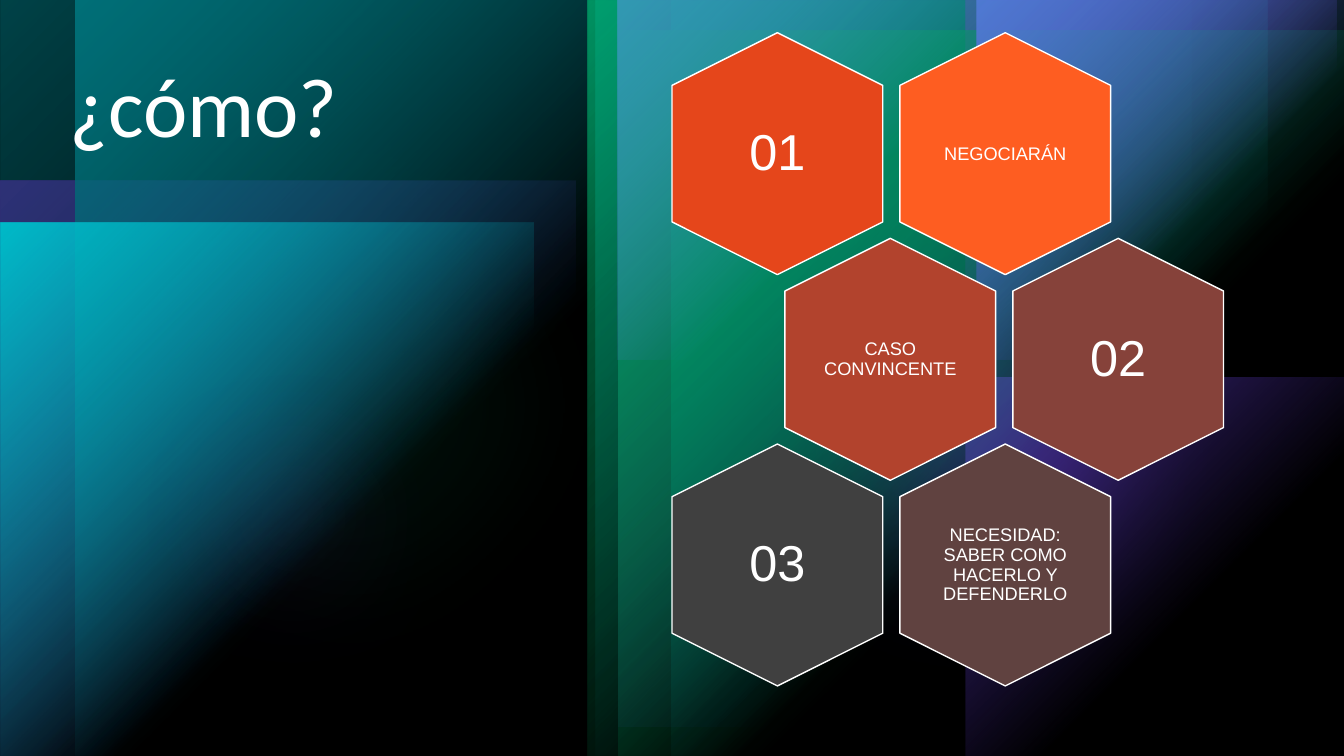
from lxml import etree
from pptx import Presentation
from pptx.dml.color import RGBColor
from pptx.enum.shapes import MSO_SHAPE
from pptx.enum.text import MSO_ANCHOR, PP_ALIGN
from pptx.oxml import parse_xml
from pptx.oxml.ns import nsdecls, qn
from pptx.util import Inches, Pt

RECTANGLE, ELLIPSE, HEXAGON = MSO_SHAPE.RECTANGLE, MSO_SHAPE.OVAL, MSO_SHAPE.HEXAGON
TOP, MIDDLE = MSO_ANCHOR.TOP, MSO_ANCHOR.MIDDLE
LEFT, CENTER = PP_ALIGN.LEFT, PP_ALIGN.CENTER
BLACK, WHITE = "000000", "FFFFFF"
VIOLET, GREEN, CYAN = "794DFF", "00D17D", "00BAC8"
SOFT_EDGE = 1270000


def color(value):
    return RGBColor.from_string(value)


def add_text(text, box, size, font_name, inset, anchor, alignment):
    text_box = slide.shapes.add_textbox(*[Inches(value) for value in box])
    frame = text_box.text_frame
    frame_format = {
        "word_wrap": True, "vertical_anchor": anchor,
        "margin_left": Inches(inset[0]), "margin_right": Inches(inset[0]),
        "margin_top": Inches(inset[1]), "margin_bottom": Inches(inset[1]),
    }
    for name, value in frame_format.items():
        setattr(frame, name, value)
    paragraph = frame.paragraphs[0]
    paragraph.text = text
    paragraph.alignment = alignment
    paragraph.line_spacing = 0.9
    for name, value in {"size": Pt(size), "name": font_name}.items():
        setattr(paragraph.font, name, value)
    paragraph.font.color.rgb = color(WHITE)


presentation = Presentation()
presentation.slide_width = Inches(13.33)
presentation.slide_height = Inches(7.5)
slide = presentation.slides.add_slide(presentation.slide_layouts[6])
slide.background.fill.solid()
slide.background.fill.fore_color.rgb = color(BLACK)

GLOW, SOFT, VEIL = "glow", "soft", "veil"
full_slide = (0, 0, 13.33, 7.5)
backdrop = [
    (GLOW, (0, 1.8, 5.71, 5.71), 0, "V", VIOLET, 60),
    (SOFT, (6.29, 0.43, 4.72, 4.72), 0, "V", GREEN, 60),
    (SOFT, (0, 0.56, 6.94, 6.94), 0, "V", GREEN, 20),
    (GLOW, (0, 0, 5.91, 7.5), 180, "V", CYAN, 100),
    (GLOW, (5.91, 0, 5.91, 7.5), 180, "HV", CYAN, 100),
    (GLOW, (6.13, 0, 7.21, 7.21), 180, "V", VIOLET, 100),
    (VEIL, full_slide, 0, "", BLACK, 40),
    (GLOW, (0, 1.79, 5.71, 5.71), 270, "", VIOLET, 60),
    (SOFT, (6.98, 0, 4.72, 4.72), 0, "", GREEN, 96),
    (SOFT, (6.69, 1.35, 6.02, 6.02), 0, "", VIOLET, 60),
    (GLOW, (6.66, 0, 5.91, 7.5), 0, "", CYAN, 100),
    (GLOW, (0.75, 0, 5.91, 7.5), 0, "H", CYAN, 100),
    (GLOW, (9.58, 3.75, 3.75, 3.75), 90, "", VIOLET, 100),
    (GLOW, (9.58, 0, 3.75, 3.75), 90, "H", VIOLET, 100),
    (GLOW, (6.13, 0.3, 7.21, 7.21), 180, "", GREEN, 100),
    (VEIL, full_slide, 0, "", BLACK, 40),
    (GLOW, (0, 2.21, 5.29, 5.29), 180, "H", CYAN, 100),
    (SOFT, (0.54, 2.78, 4.72, 4.72), 0, "", VIOLET, 20),
    (GLOW, (9.69, 0, 3.57, 3.57), 0, "", VIOLET, 100),
    (GLOW, (6.13, 0, 3.57, 3.57), 0, "H", VIOLET, 100),
    (GLOW, (5.83, 0, 7.5, 7.5), 90, "", GREEN, 60),
]
for kind, box, rotation, flips, hue, opacity in backdrop:
    preset = ELLIPSE if kind == SOFT else RECTANGLE
    shape = slide.shapes.add_shape(preset, *[Inches(value) for value in box])
    shape.rotation = rotation
    shape.shadow.inherit = False
    shape.line.fill.background()
    shape.fill.solid()
    shape.fill.fore_color.rgb = color(hue)
    properties = shape.element.spPr
    for flip in flips:
        properties.find(qn("a:xfrm")).set("flip" + flip, "1")
    solid = properties.find(qn("a:solidFill"))
    if kind == GLOW:
        stops = "".join(
            f'<a:gs pos="{position * 1000}"><a:srgbClr val="{hue}">'
            f'<a:alpha val="{alpha * 1000}"/></a:srgbClr></a:gs>'
            for position, alpha in ((0, opacity), (60, 0)))
        properties.replace(solid, parse_xml(
            f'<a:gradFill {nsdecls("a")} rotWithShape="1"><a:gsLst>{stops}</a:gsLst>'
            '<a:path path="circle"><a:fillToRect r="100000" b="100000"/></a:path>'
            '</a:gradFill>'))
    else:
        etree.SubElement(solid[0], qn("a:alpha")).set("val", str(opacity * 1000))
    if kind == SOFT:
        effects = properties.find(qn("a:effectLst"))
        etree.SubElement(effects, qn("a:softEdge")).set("rad", str(SOFT_EDGE))

add_text("¿cómo?", (0.59, 0.59, 12.14, 1.98), 60, "Calibri", (0.1, 0.05), TOP, LEFT)

hexagon_rows = [
    [("01", "E5461B"), ("NEGOCIARÁN", "FE5D21")],
    [("CASO CONVINCENTE", "B2432D"), ("02", "86423A")],
    [("03", "404040"), ("NECESIDAD: SABER COMO HACERLO Y DEFENDERLO", "604240")],
]
for row, cells in enumerate(hexagon_rows):
    for column, (text, hue) in enumerate(cells):
        left = 6.51 + 2.26 * column + 1.12 * (row % 2)
        top = 0.48 + 2.04 * row
        hexagon = slide.shapes.add_shape(
            HEXAGON, Inches(left), Inches(top), Inches(2.4), Inches(2.09))
        hexagon.rotation = 90
        hexagon.adjustments[0] = 0.25
        hexagon.shadow.inherit = False
        hexagon.fill.solid()
        hexagon.fill.fore_color.rgb = color(hue)
        hexagon.line.color.rgb = color(WHITE)
        hexagon.line.width = Pt(1)
        size, inset = (36, 0) if text.isdigit() else (13, 0.05)
        add_text(text, (left + 0.48, top + 0.22, 1.44, 1.66), size, "Arial",
                 (inset, inset), MIDDLE, CENTER)

presentation.save("out.pptx")
